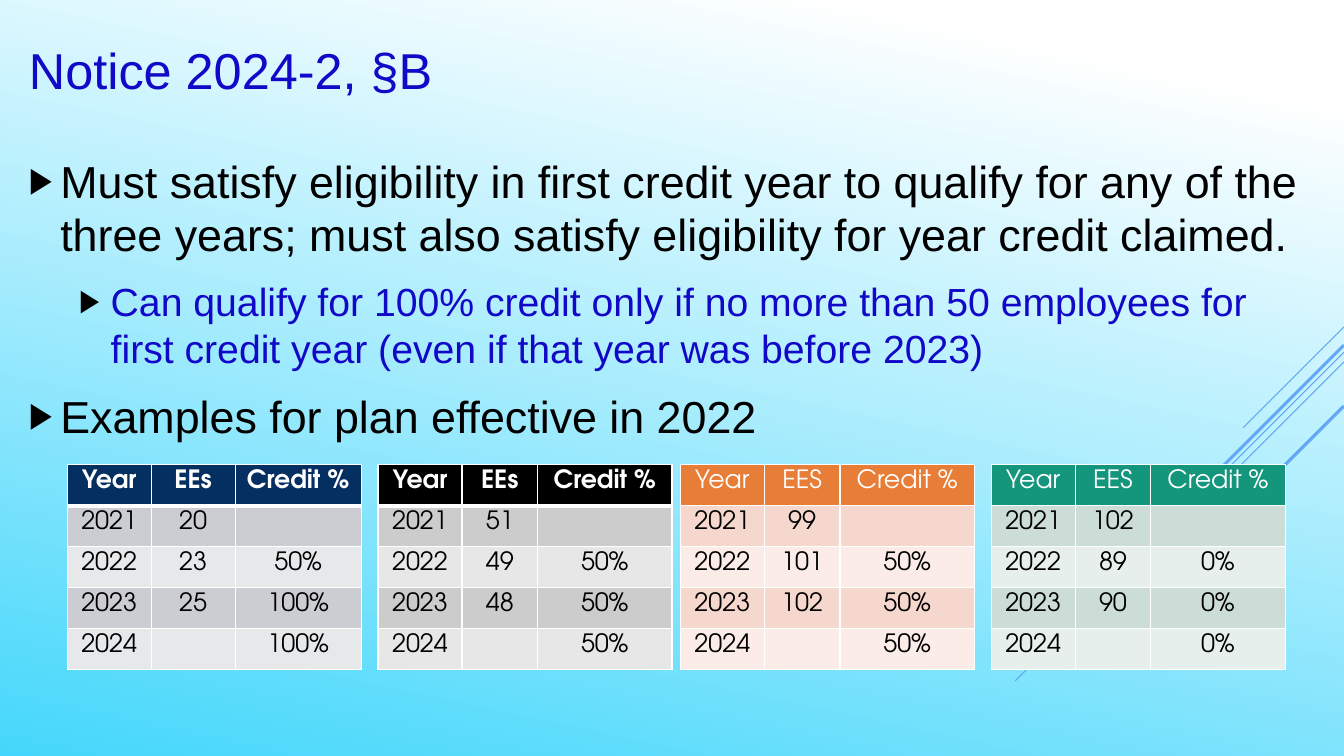
from dataclasses import dataclass

from lxml import etree
from pptx import Presentation
from pptx.dml.color import RGBColor
from pptx.enum.shapes import MSO_CONNECTOR
from pptx.enum.text import MSO_ANCHOR, PP_ALIGN
from pptx.oxml.ns import qn
from pptx.util import Pt

STRAIGHT = MSO_CONNECTOR.STRAIGHT
LEFT, CENTER = PP_ALIGN.LEFT, PP_ALIGN.CENTER
MIDDLE = MSO_ANCHOR.MIDDLE
TITLE_ONLY = 5


@dataclass(frozen=True)
class Theme:
    text_font: str = "Arial"
    table_font: str = "TeX Gyre Adventor"
    title_size: int = 36
    level_sizes: tuple = (32, 28)
    table_size: int = 18
    white: str = "FFFFFF"
    black: str = "000000"
    blue: str = "1108C8"
    sky: str = "45D7FB"
    streak: str = "64A7F7"


THEME = Theme()

# Streaks from the right edge: top, horizontal reach, line width
STREAKS = [(233.5, 72, 0.75), (251.5, 235, 0.75), (258.5, 149, 0.75),
           (246.5, 137.5, 2.25), (290, 100, 2.25)]

BULLETS = [
    (0, "Must satisfy eligibility in first credit year to qualify for any of the "
        "three years; must also satisfy eligibility for year credit claimed."),
    (1, "Can qualify for 100% credit only if no more than 50 employees for "
        "first credit year (even if that year was before 2023)"),
    (0, "Examples for plan effective in 2022"),
]

YEARS = ["2021", "2022", "2023", "2024"]


@dataclass(frozen=True)
class Example:
    left: float
    columns: tuple
    employees_label: str
    strong_header: bool  # bold text above a thick rule
    fills: tuple  # header, odd row, even row
    employees: tuple
    credits: tuple


EXAMPLES = [
    Example(48, (60, 60, 90), "EEs", True, ("052F61", "CCCDD2", "E7E8EA"),
            ("20", "23", "25", ""), ("", "50%", "100%", "100%")),
    Example(270, (60, 54, 96), "EEs", True, ("000000", "CCCCCC", "E7E7E7"),
            ("51", "49", "48", ""), ("", "50%", "50%", "50%")),
    Example(486, (60, 54, 96), "EES", False, ("E87D37", "F6D7CE", "FBECE8"),
            ("99", "101", "102", ""), ("", "50%", "50%", "50%")),
    Example(708, (60, 54, 96), "EES", False, ("14967C", "CCDDD7", "E7EFEC"),
            ("102", "89", "90", ""), ("", "0%", "0%", "0%")),
]


def rgb(color):
    return RGBColor.from_string(color)


def set_font(paragraph, name, size, color, bold=False):
    font = paragraph.font
    font.name, font.size, font.bold = name, Pt(size), bold
    font.color.rgb = rgb(color)


def paint_background(slide):
    fill = slide.background.fill
    fill.gradient()
    fill.gradient_angle = 258
    for stop, position, color in zip(fill.gradient_stops, (0.1, 1), (THEME.white, THEME.sky)):
        stop.position = position
        stop.color.rgb = rgb(color)


def add_streaks(slide, right):
    """Draw the 45-degree lines that run down and left from the right edge."""
    for top, reach, width in STREAKS:
        streak = slide.shapes.add_connector(
            STRAIGHT, Pt(right), Pt(top), Pt(right - reach), Pt(top + reach))
        streak.line.color.rgb = rgb(THEME.streak)
        streak.line.width = Pt(width)
        etree.SubElement(streak._element.spPr, qn("a:effectLst"))


def place_title(slide, left, top, width, height):
    title = slide.shapes.title
    title.left, title.top, title.width, title.height = map(Pt, (left, top, width, height))
    frame = title.text_frame
    frame.text = "Notice 2024-2, §B"
    frame.vertical_anchor = MIDDLE
    paragraph = frame.paragraphs[0]
    paragraph.alignment = LEFT
    set_font(paragraph, THEME.text_font, THEME.title_size, THEME.blue)


def set_bullet(paragraph, level):
    properties = paragraph._p.get_or_add_pPr()
    properties.set("marL", str(Pt(22.5 + 36 * level)))
    properties.set("indent", str(Pt(-22.5)))
    color = etree.SubElement(properties, qn("a:buClr"))
    etree.SubElement(color, qn("a:srgbClr"), val=THEME.black)
    etree.SubElement(properties, qn("a:buSzPct"), val="80000")
    etree.SubElement(properties, qn("a:buFont"), typeface=THEME.text_font)
    etree.SubElement(properties, qn("a:buChar"), char="▶")


def add_bullets(slide, left, top, width, height):
    frame = slide.shapes.add_textbox(*map(Pt, (left, top, width, height))).text_frame
    frame.word_wrap = True
    for index, (level, text) in enumerate(BULLETS):
        paragraph = frame.add_paragraph() if index else frame.paragraphs[0]
        paragraph.text = text
        paragraph.level = level
        set_bullet(paragraph, level)
        size = THEME.level_sizes[level]
        if index:
            paragraph.space_before = Pt(size * 0.2)
        paragraph.space_after = Pt(6)
        set_font(paragraph, THEME.text_font, size, THEME.blue if level else THEME.black)


def set_borders(cell, bottom):
    properties = cell._tc.get_or_add_tcPr()
    for index, (side, width) in enumerate(zip("LRTB", (1, 1, 1, bottom))):
        line = etree.Element(qn(f"a:ln{side}"), w=str(Pt(width)))
        fill = etree.SubElement(line, qn("a:solidFill"))
        etree.SubElement(fill, qn("a:srgbClr"), val=THEME.white)
        properties.insert(index, line)


def add_example(slide, example, top, row_height):
    rows = [("Year", example.employees_label, "Credit %"),
            *zip(YEARS, example.employees, example.credits)]
    table = slide.shapes.add_table(
        len(rows), len(example.columns), Pt(example.left), Pt(top),
        Pt(sum(example.columns)), Pt(row_height * len(rows))).table
    for column, width in zip(table.columns, example.columns):
        column.width = Pt(width)
    header_fill, *band_fills = example.fills
    for row_index, values in enumerate(rows):
        is_header = row_index == 0
        is_strong = is_header and example.strong_header
        fill = header_fill if is_header else band_fills[(row_index - 1) % 2]
        for column_index, value in enumerate(values):
            cell = table.cell(row_index, column_index)
            cell.fill.solid()
            cell.fill.fore_color.rgb = rgb(fill)
            set_borders(cell, bottom=3 if is_strong else 1)
            cell.text = value
            paragraph = cell.text_frame.paragraphs[0]
            paragraph.alignment = CENTER
            set_font(paragraph, THEME.table_font, THEME.table_size,
                     THEME.white if is_header else THEME.black, is_strong)


def main():
    presentation = Presentation()
    presentation.slide_width, presentation.slide_height = Pt(960), Pt(540)
    slide = presentation.slides.add_slide(presentation.slide_layouts[TITLE_ONLY])
    paint_background(slide)
    add_streaks(slide, right=960)
    place_title(slide, 13.5, 0.5, 838, 97.5)
    add_bullets(slide, 13.5, 106, 927, 427)
    for example in EXAMPLES:
        add_example(slide, example, top=332, row_height=29.25)
    presentation.save("out.pptx")


if __name__ == "__main__":
    main()
